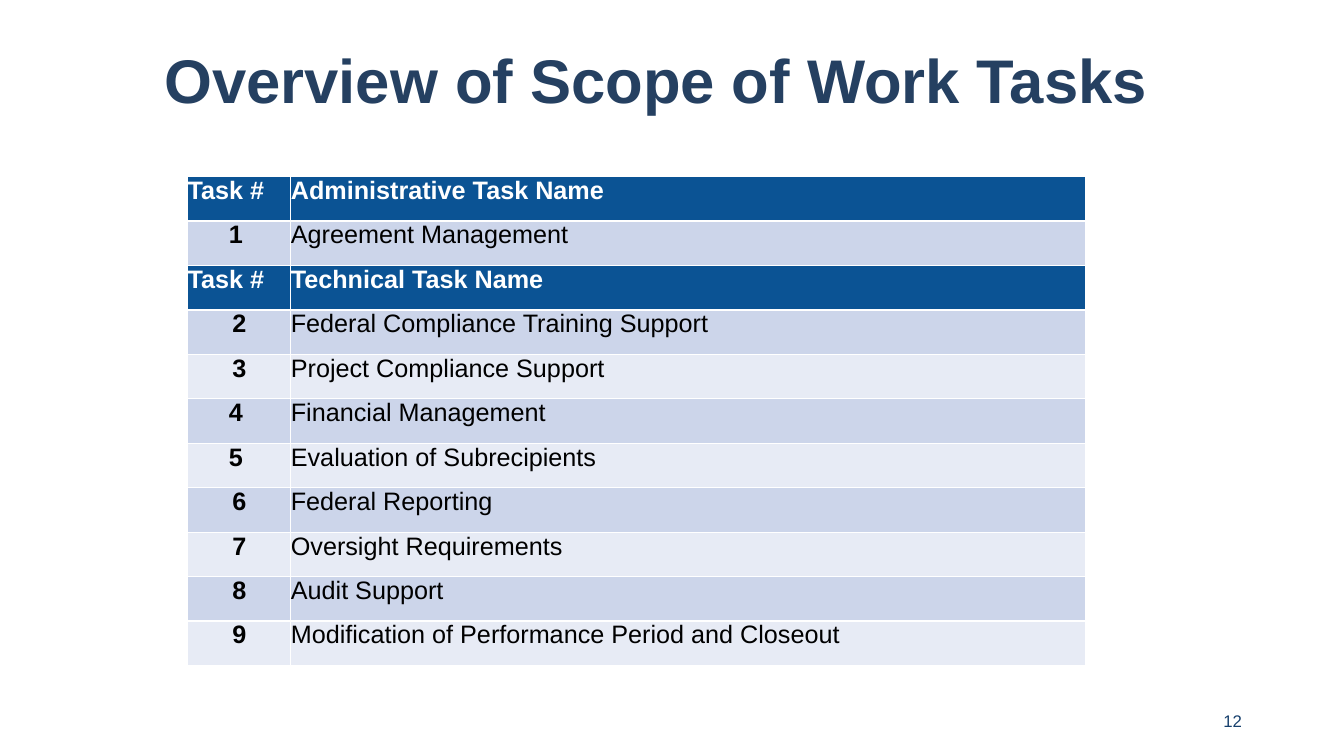
import pptx
import pptx.dml.color
import pptx.enum.text
import pptx.util

Cm = pptx.util.Cm
Align = pptx.enum.text.PP_ALIGN
Anchor = pptx.enum.text.MSO_ANCHOR

COLORS = {
    "title": "254061",
    "header": "0B5394",
    "header_text": "FFFFFF",
    "dark_band": "CCD5EA",
    "light_band": "E7EBF5",
    "body_text": "000000",
    "page_number": "17406D",
}

TASKS = [
    ("Task # ", "Administrative Task Name "),
    ("1 ", "Agreement Management  "),
    ("Task # ", "Technical Task Name"),
    ("2", "Federal Compliance Training Support"),
    ("3", "Project Compliance Support"),
    ("4 ", "Financial Management"),
    ("5 ", "Evaluation of Subrecipients"),
    ("6", "Federal Reporting"),
    ("7", "Oversight Requirements"),
    ("8", "Audit Support"),
    ("9", "Modification of Performance Period and Closeout"),
]


def rgb(name):
    return pptx.dml.color.RGBColor.from_string(COLORS[name])


def write_text(frame, text, *, size, color, font, bold=False,
               align=Align.LEFT, line_spacing=None):
    paragraph = frame.paragraphs[0]
    paragraph.alignment = align
    if line_spacing:
        paragraph.line_spacing = line_spacing
    run = paragraph.add_run()
    run.text = text
    run.font.name = font
    run.font.size = pptx.util.Pt(size)
    run.font.bold = bold
    run.font.color.rgb = rgb(color)


class SlideBuilder:
    """Holds the font and the slide being filled."""

    def __init__(self, slide, font):
        self.slide = slide
        self.font = font

    def text_box(self, text, left, top, width, height, **text_format):
        shape = self.slide.shapes.add_textbox(
            Cm(left), Cm(top), Cm(width), Cm(height))
        frame = shape.text_frame
        frame.word_wrap = True
        frame.vertical_anchor = Anchor.MIDDLE
        write_text(frame, text, font=self.font, **text_format)

    def cell(self, cell, text, fill, **text_format):
        cell.margin_left = cell.margin_right = 0
        cell.margin_top = cell.margin_bottom = 0
        cell.fill.solid()
        cell.fill.fore_color.rgb = rgb(fill)
        write_text(cell.text_frame, text, size=18, font=self.font, **text_format)

    def task_table(self, tasks, left, top, column_widths, row_height):
        """Add the table; the bands alternate and start dark after each header."""
        table = self.slide.shapes.add_table(
            len(tasks), len(column_widths), Cm(left), Cm(top),
            Cm(sum(column_widths)), Cm(row_height * len(tasks))).table
        for column, width in zip(table.columns, column_widths):
            column.width = Cm(width)
        for row in table.rows:
            row.height = Cm(row_height)

        for index, (number, name) in enumerate(tasks):
            is_header = number.startswith("Task")
            if is_header:
                fill, color = "header", "header_text"
            else:
                fill = "dark_band" if index % 2 else "light_band"
                color = "body_text"
            self.cell(table.cell(index, 0), number, fill, color=color, bold=True,
                      align=Align.JUSTIFY if is_header else Align.CENTER)
            self.cell(table.cell(index, 1), name, fill, color=color,
                      bold=is_header, align=Align.JUSTIFY)


def main():
    presentation = pptx.Presentation()
    presentation.slide_width = Cm(33.87)
    presentation.slide_height = Cm(19.05)
    slide = presentation.slides.add_slide(presentation.slide_layouts[6])

    builder = SlideBuilder(slide, font="Arial")
    builder.text_box("Overview of Scope of Work Tasks", 3.89, 0.66, 27.66, 2.9,
                     size=44, color="title", bold=True, line_spacing=0.9)
    builder.task_table(TASKS, left=4.73, top=4.45,
                       column_widths=[2.6, 20.04], row_height=1.12)
    builder.text_box("12", 23.93, 17.65, 7.62, 1.02,
                     size=12, color="page_number", align=Align.RIGHT)
    presentation.save("out.pptx")


if __name__ == "__main__":
    main()
